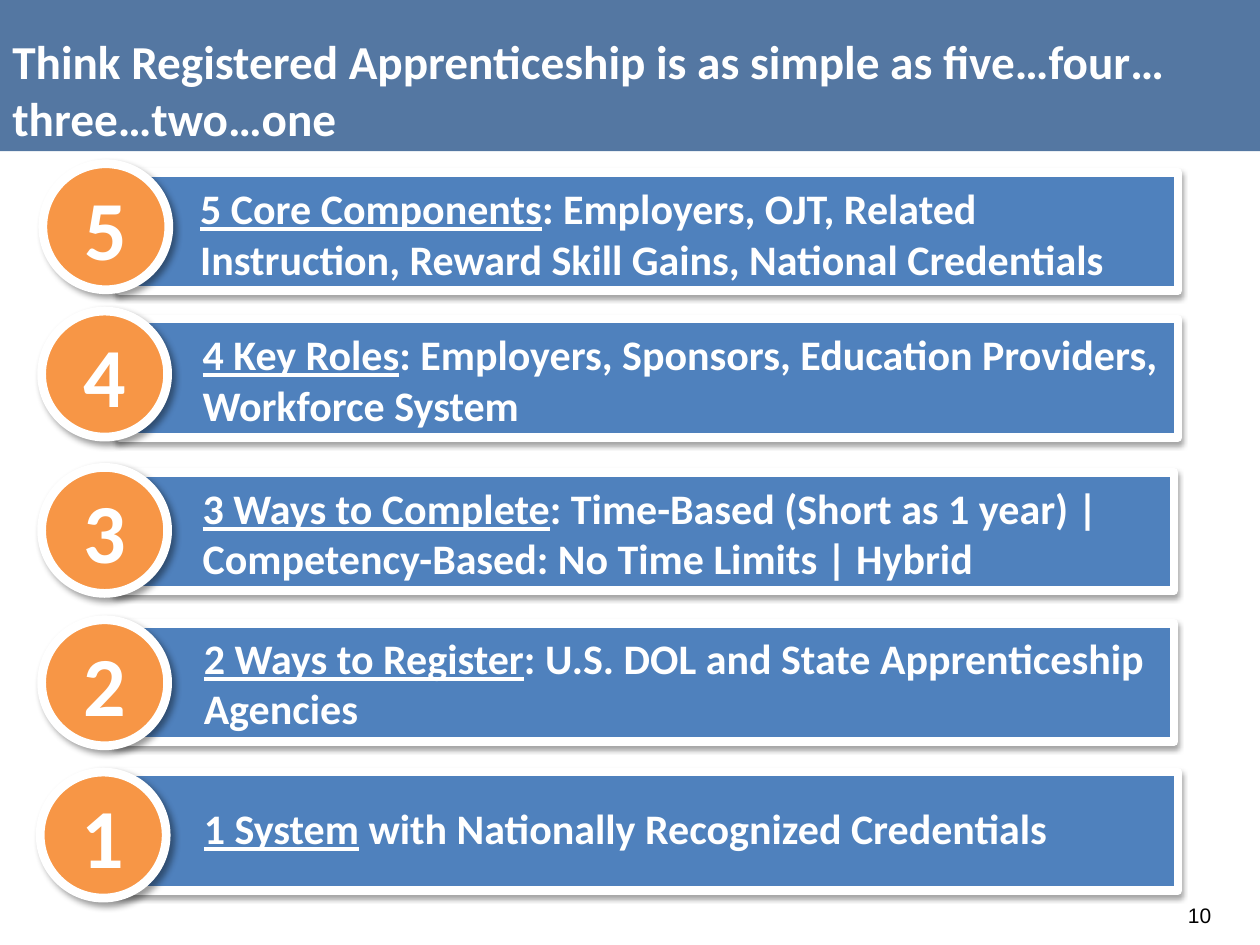
import lxml.etree
import pptx
import pptx.dml.color
import pptx.enum.shapes
import pptx.enum.text
import pptx.oxml.ns
import pptx.util

Pt = pptx.util.Pt
RGBColor = pptx.dml.color.RGBColor
MSO_SHAPE = pptx.enum.shapes.MSO_SHAPE
PP_ALIGN = pptx.enum.text.PP_ALIGN
MSO_ANCHOR = pptx.enum.text.MSO_ANCHOR
qn = pptx.oxml.ns.qn

WHITE = RGBColor(0xFF, 0xFF, 0xFF)
BLACK = RGBColor(0, 0, 0)
NAVY = RGBColor(0x37, 0x60, 0x92)
BLUE = RGBColor(0x4F, 0x81, 0xBD)
ORANGE = RGBColor(0xF7, 0x96, 0x46)


def add_panel(kind, left, top, width, height, color, shadow=None):
    shape = slide.shapes.add_shape(kind, Pt(left), Pt(top), Pt(width), Pt(height))
    shape.shadow.inherit = False
    shape.fill.solid()
    shape.fill.fore_color.rgb = color
    if shadow is None:
        shape.line.fill.background()
        return shape
    shape.line.color.rgb = WHITE
    shape.line.width = Pt(5)
    opacity, blur, distance, angle = shadow
    effects = shape.element.spPr.find(qn("a:effectLst"))
    outer = lxml.etree.SubElement(
        effects, qn("a:outerShdw"), blurRad=str(Pt(blur)), dist=str(Pt(distance)),
        dir=str(angle * 60000), algn="ctr", rotWithShape="0")
    shade = lxml.etree.SubElement(outer, qn("a:srgbClr"), val=str(BLACK))
    lxml.etree.SubElement(shade, qn("a:alpha"), val=str(opacity * 1000))
    return shape


def add_run(paragraph, text, size, font="Calibri", color=WHITE, bold=True, underline=None):
    run = paragraph.add_run()
    run.text = text
    run.font.size = Pt(size)
    run.font.name = font
    run.font.color.rgb = color
    run.font.bold = bold
    run.font.underline = underline


presentation = pptx.Presentation()
presentation.slide_width = Pt(720)
presentation.slide_height = Pt(540)
slide = presentation.slides.add_slide(presentation.slide_layouts[6])

banner = add_panel(MSO_SHAPE.RECTANGLE, -0.5, 0, 720.5, 86.4, NAVY)
banner_color = banner.element.spPr.find(qn("a:solidFill"))[0]
lxml.etree.SubElement(banner_color, qn("a:alpha"), val="85000")

title = slide.shapes.add_textbox(Pt(0), Pt(15.1), Pt(720), Pt(61.2))
title.text_frame.word_wrap = True
add_run(title.text_frame.paragraphs[0],
        "Think Registered Apprenticeship is as simple as five…four…three…two…one", 27)

rows = [
    ("5", "5 Core Components",
     ": Employers, OJT, Related Instruction, Reward Skill Gains, National Credentials",
     (68.4, 98.6), (24.5, 93.6), (107.3, 100.8, 65.4)),
    ("4", "4 Key Roles",
     ": Employers, Sponsors, Education Providers, Workforce System",
     (68.4, 182.3), (23.8, 177.8), (108.7, 184.3, 65.4)),
    ("3", "3 Ways to Complete",
     ": Time-Based (Short as 1 year) | Competency-Based: No Time Limits | Hybrid",
     (66.2, 269.8), (23.8, 267.1), (108.7, 272.2, 65.4)),
    ("2", "2 Ways to Register",
     ": U.S. DOL and State Apprenticeship Agencies",
     (66.2, 356.2), (23.8, 354.2), (109.4, 357.8, 65.4)),
    ("1", "1 System",
     " with Nationally Recognized Credentials",
     (68.4, 441.2), (23, 441.2), (109.4, 455, 36)),
]

for number, heading, detail, bar_at, badge_at, label_at in rows:
    add_panel(MSO_SHAPE.RECTANGLE, *bar_at, 604.8, 67.6, BLUE, (35, 3.1, 1.8, 90))

    badge = add_panel(MSO_SHAPE.OVAL, *badge_at, 72, 72, ORANGE, (40, 4, 3, 45))
    badge.text_frame.vertical_anchor = MSO_ANCHOR.MIDDLE
    paragraph = badge.text_frame.paragraphs[0]
    paragraph.alignment = PP_ALIGN.CENTER
    add_run(paragraph, number, 48)

    left, top, height = label_at
    label = slide.shapes.add_textbox(Pt(left), Pt(top), Pt(561.6), Pt(height))
    label.text_frame.word_wrap = True
    label.text_frame.auto_size = pptx.enum.text.MSO_AUTO_SIZE.SHAPE_TO_FIT_TEXT
    paragraph = label.text_frame.paragraphs[0]
    add_run(paragraph, heading, 24, underline=True)
    add_run(paragraph, detail, 24)

page_number = slide.shapes.add_textbox(Pt(531.4), Pt(508.3), Pt(167.8), Pt(28.8))
page_number.text_frame.word_wrap = True
page_number.text_frame.vertical_anchor = MSO_ANCHOR.MIDDLE
paragraph = page_number.text_frame.paragraphs[0]
paragraph.alignment = PP_ALIGN.RIGHT
add_run(paragraph, "10", 12, "Arial", BLACK, False)

presentation.save("out.pptx")
